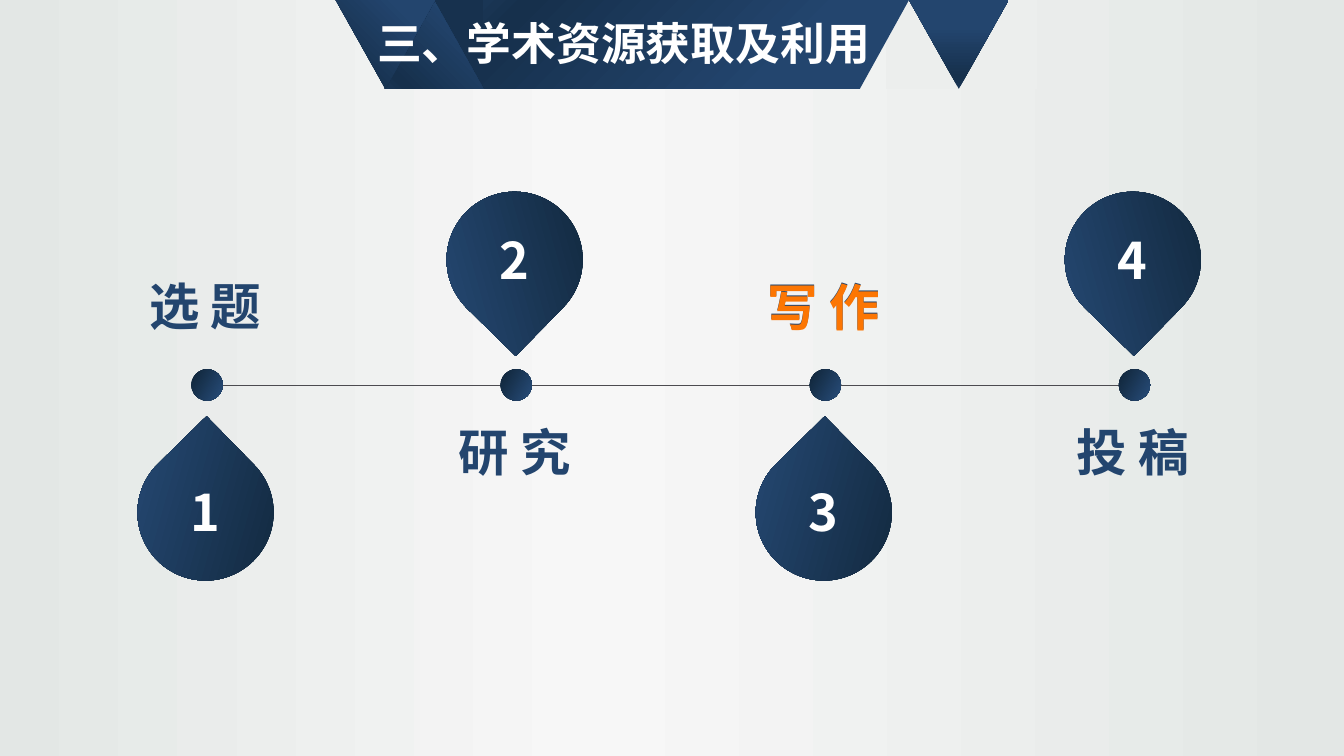
from dataclasses import dataclass
from lxml.etree import SubElement
from pptx import Presentation
from pptx.dml.color import RGBColor
from pptx.enum.shapes import MSO_CONNECTOR, MSO_SHAPE
from pptx.enum.text import MSO_ANCHOR, MSO_AUTO_SIZE, PP_ALIGN
from pptx.oxml.ns import qn
from pptx.util import Cm, Pt


@dataclass(frozen=True)
class Theme:
    font: str = "Noto Sans CJK SC"
    title_size: int = 32
    label_size: int = 36
    navy: str = "23456E"
    dark_navy: str = "17314E"
    white: str = "FFFFFF"
    orange: str = "FC7603"
    line: str = "4C4B50"
    panel: str = "ECEEED"
    backdrop: tuple = ((1, "E3E7E5"), (56, "F7F7F7"), (100, "E3E7E5"))
    marker: tuple = ((0, "0F2437"), (100, "284D7A"))

    def ribbon(self, middle, end=78):
        return (0, "1A3655"), (middle, "16304C"), (end, self.navy)


def paint(fill, element, stops, angle):
    fill.gradient()
    grad = next(element.iter(qn("a:gradFill")))
    stop_list = grad.find(qn("a:gsLst"))
    stop_list.clear()
    for position, color in stops:
        stop = SubElement(stop_list, qn("a:gs"), pos=str(position * 1000))
        SubElement(stop, qn("a:srgbClr"), val=color)
    grad.find(qn("a:lin")).set("ang", str(angle * 60000))


def write(sp, text, size, color, wrap=False):
    tf = sp.text_frame
    tf.word_wrap = wrap
    tf.auto_size = MSO_AUTO_SIZE.SHAPE_TO_FIT_TEXT
    tf.vertical_anchor = MSO_ANCHOR.TOP
    p = tf.paragraphs[0]
    p.alignment = PP_ALIGN.LEFT
    r = p.add_run()
    r.text = text
    r.font.name = theme.font
    r.font.size = Pt(size)
    r.font.bold = True
    r.font.color.rgb = RGBColor.from_string(color)
    SubElement(r.font._element, qn("a:ea"), typeface=theme.font)


theme = Theme()
prs = Presentation()
prs.slide_width = Cm(33.87)
prs.slide_height = Cm(19.05)
s = prs.slides.add_slide(prs.slide_layouts[5])
paint(s.background.fill, s.element, theme.backdrop, 180)

axis_y = 9.7
axis = s.shapes.add_connector(
    MSO_CONNECTOR.STRAIGHT, Cm(4.9), Cm(axis_y), Cm(28.9), Cm(axis_y))
axis.line.color.rgb = RGBColor.from_string(theme.line)
axis.line.width = Pt(0.5)
SubElement(axis.element.spPr, qn("a:effectLst"))

first_x, step_x = 5.22, 7.79
dot, drop = 0.79, 3.43
steps = [("选 题", True), ("研 究", False), ("写 作", True), ("投 稿", False)]

shapes, texts = [], []
for i, (label, below) in enumerate(steps):
    x = first_x + i * step_x
    drop_y, label_y, number_y = (11.2, 6.81, 12.01) if below else (4.83, 10.49, 5.66)
    shapes.append((MSO_SHAPE.OVAL, x - dot / 2, axis_y - dot / 2, dot, dot,
                   0, "", theme.marker, 30))
    shapes.append((MSO_SHAPE.TEAR, x - 0.04 - drop / 2, drop_y, drop, drop,
                   225.6 if below else 134.4, "V" if below else "", theme.marker, 30))
    texts.append((label, x - 1.71, label_y, drop, theme.navy))
    texts.append((str(i + 1), x - 0.67, number_y, 1.3, theme.white))
texts.append(("写 作", first_x + 2 * step_x - 1.71, 6.84, drop, theme.orange))

banner = [
    (MSO_SHAPE.RECTANGLE, 22.33, 3.81, "", theme.panel, 0),
    (MSO_SHAPE.RIGHT_TRIANGLE, 21.67, 1.24, "V", theme.navy, 0),
    (MSO_SHAPE.RECTANGLE, 12.17, 9.5, "", theme.ribbon(10), 45),
    (MSO_SHAPE.RIGHT_TRIANGLE, 10.9, 1.27, "HV", theme.dark_navy, 0),
    (MSO_SHAPE.ISOSCELES_TRIANGLE, 9.68, 2.51, "", theme.ribbon(13), 315),
    (MSO_SHAPE.ISOSCELES_TRIANGLE, 8.46, 2.51, "HV", theme.ribbon(17), 135),
    (MSO_SHAPE.ISOSCELES_TRIANGLE, 22.91, 2.51, "HV", theme.ribbon(13, 70), 90),
]
for kind, x, width, flip, color, angle in banner:
    shapes.append((kind, x, 0, width, 2.24, 0, flip, color, angle))

for kind, x, y, width, height, rotation, flip, color, angle in shapes:
    sp = s.shapes.add_shape(kind, Cm(x), Cm(y), Cm(width), Cm(height))
    sp.shadow.inherit = False
    sp.line.fill.background()
    sp.rotation = rotation
    for axis_name in flip:
        sp.element.spPr.find(qn("a:xfrm")).set("flip" + axis_name, "1")
    if isinstance(color, str):
        sp.fill.solid()
        sp.fill.fore_color.rgb = RGBColor.from_string(color)
    else:
        paint(sp.fill, sp.element, color, angle)

for text, x, y, width, color in texts:
    sp = s.shapes.add_textbox(Cm(x), Cm(y), Cm(width), Cm(1.8))
    write(sp, text, theme.label_size, color)

title = s.shapes.title
title.left, title.top, title.width, title.height = Cm(9.25), Cm(0.28), Cm(13), Cm(1.63)
write(title, "三、学术资源获取及利用", theme.title_size, theme.white, wrap=True)
title.element.getparent().append(title.element)

prs.save("out.pptx")
